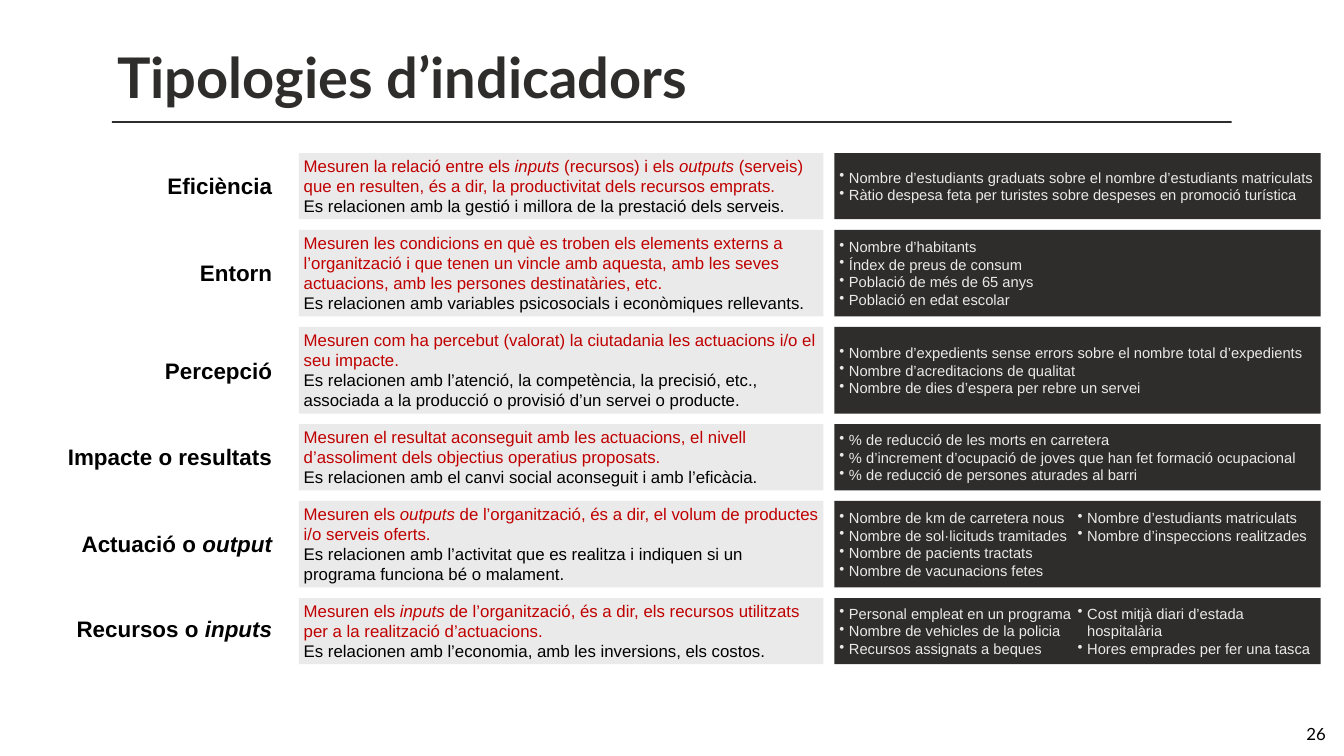
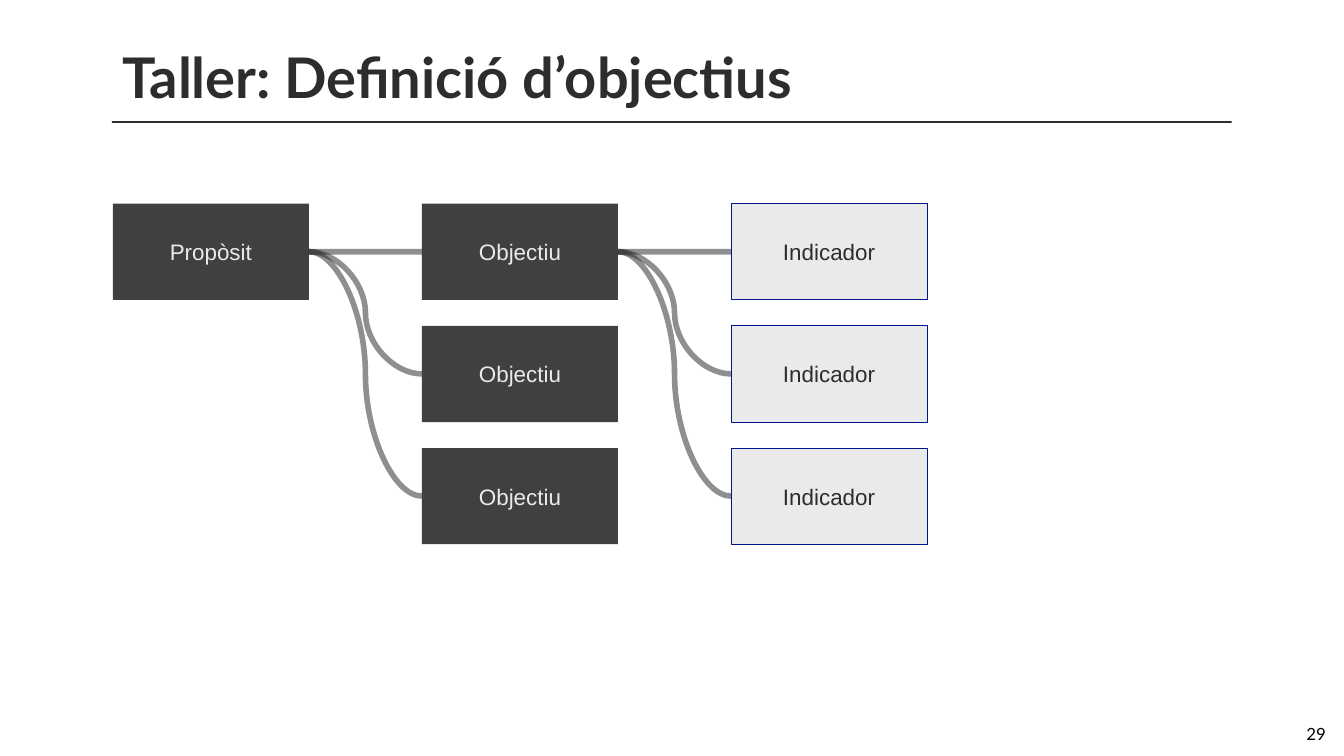
from lxml import etree
from pptx import Presentation
from pptx.dml import color
from pptx.enum import shapes, text
from pptx.oxml import ns
from pptx.util import Cm, Pt

INK, PALE, RED, BLACK = "2E2D2C", "EAEAEA", "C00000", "000000"
GREY, BLUE = "404040", "001689"
LEFT, MID, RIGHT = text.PP_ALIGN.LEFT, text.PP_ALIGN.CENTER, text.PP_ALIGN.RIGHT

# Label, what it measures, what it relates to, examples, columns of examples
TYPES = [
    ("Eficiència",
     "Mesuren la relació entre els *inputs* (recursos) i els *outputs* (serveis) "
     "que en resulten, és a dir, la productivitat dels recursos emprats.",
     "Es relacionen amb la gestió i millora de la prestació dels serveis.",
     ["Nombre d’estudiants graduats sobre el nombre d’estudiants matriculats",
      "Ràtio despesa feta per turistes sobre despeses en promoció turística"], 1),
    ("Entorn",
     "Mesuren les condicions en què es troben els elements externs a "
     "l’organització i que tenen un vincle amb aquesta, amb les seves "
     "actuacions, amb les persones destinatàries, etc.",
     "Es relacionen amb variables psicosocials i econòmiques rellevants.",
     ["Nombre d’habitants", "Índex de preus de consum",
      "Població de més de 65 anys", "Població en edat escolar"], 1),
    ("Percepció",
     "Mesuren com ha percebut (valorat) la ciutadania les actuacions i/o el "
     "seu impacte.",
     "Es relacionen amb l’atenció, la competència, la precisió, etc., "
     "associada a la producció o provisió d’un servei o producte.",
     ["Nombre d’expedients sense errors sobre el nombre total d’expedients",
      "Nombre d’acreditacions de qualitat",
      "Nombre de dies d’espera per rebre un servei"], 1),
    ("Impacte o resultats",
     "Mesuren el resultat aconseguit amb les actuacions, el nivell "
     "d’assoliment dels objectius operatius proposats.",
     "Es relacionen amb el canvi social aconseguit i amb l’eficàcia.",
     ["% de reducció de les morts en carretera",
      "% d’increment d’ocupació de joves que han fet formació ocupacional",
      "% de reducció de persones aturades al barri"], 1),
    ("Actuació o *output*",
     "Mesuren els *outputs* de l’organització, és a dir, el volum de productes "
     "i/o serveis oferts.",
     "Es relacionen amb l’activitat que es realitza i indiquen si un "
     "programa funciona bé o malament.",
     ["Nombre de km de carretera nous", "Nombre de sol·licituds tramitades",
      "Nombre de pacients tractats", "Nombre de vacunacions fetes",
      "Nombre d’estudiants matriculats", "Nombre d’inspeccions realitzades"], 2),
    ("Recursos o *inputs*",
     "Mesuren els *inputs* de l’organització, és a dir, els recursos utilitzats "
     "per a la realització d’actuacions.",
     "Es relacionen amb l’economia, amb les inversions, els costos.",
     ["Personal empleat en un programa", "Nombre de vehicles de la policia",
      "Recursos assignats a beques", "Cost mitjà diari d’estada hospitalària",
      "Hores emprades per fer una tasca"], 2),
]
LOW, HIGH, GAP = 3.33, 4.37, 0.53
HEIGHTS = [LOW, HIGH, HIGH, LOW, HIGH, LOW]


def rgb(code):
    return color.RGBColor.from_string(code)


def apply(item, values):
    for name, value in values.items():
        setattr(item, name, value)


def frame(shape, anchor="TOP", inset=None):
    """Make the text of a shape wrap, and place it."""
    body = shape.text_frame
    apply(body, {"word_wrap": True, "auto_size": text.MSO_AUTO_SIZE.NONE,
                 "vertical_anchor": getattr(text.MSO_ANCHOR, anchor)})
    if inset is not None:
        sides = ("left", "right", "top", "bottom")
        apply(body, {f"margin_{side}": Cm(inset) for side in sides})
    return body


def bullet(para):
    props = para._p.get_or_add_pPr()
    props.set("marL", str(Cm(0.48)))
    props.set("indent", str(Cm(-0.48)))
    etree.SubElement(props, ns.qn("a:buChar")).set("char", "•")


def write(body, lines, size, font="Arial", bold=False, align=LEFT, dots=False):
    """Write (words, colour) lines; words between asterisks are italic."""
    for i, (words, code) in enumerate(lines):
        para = body.add_paragraph() if i else body.paragraphs[0]
        para.alignment = align
        if dots:
            bullet(para)
        for j, part in enumerate(words.split("*")):
            if part:
                run = para.add_run()
                run.text = part
                apply(run.font, {"name": font, "size": Pt(size),
                                 "bold": bold, "italic": j % 2 == 1})
                run.font.color.rgb = rgb(code)


def label(slide, place):
    return slide.shapes.add_textbox(*map(Cm, place))


def block(slide, place, fill, edge=None):
    shape = slide.shapes.add_shape(shapes.MSO_SHAPE.RECTANGLE, *map(Cm, place))
    shape.shadow.inherit = False
    shape.fill.solid()
    shape.fill.fore_color.rgb = rgb(fill)
    if edge:
        shape.line.color.rgb = rgb(edge)
        shape.line.width = Pt(1)
    else:
        shape.line.fill.background()
    return shape


def curve(slide, start, end):
    """Link the left side of one box to the right side of another."""
    link = slide.shapes.add_connector(shapes.MSO_CONNECTOR.CURVE, 0, 0, 0, 0)
    link.begin_connect(start, 1)
    link.end_connect(end, 3)
    link.line.width = Pt(8)
    link.line.color.rgb = rgb(INK)
    tone = link.line._ln.find(".//" + ns.qn("a:srgbClr"))
    etree.SubElement(tone, ns.qn("a:alpha")).set("val", "52000")
    etree.SubElement(link._element.spPr, ns.qn("a:effectLst"))


def page(deck, title, number, inset):
    """Add a slide with its title, rule and page number."""
    slide = deck.slides.add_slide(deck.slide_layouts[6])
    block(slide, (5.64, 6.1, 56.44, 0.1), INK)
    head = frame(label(slide, (5.66, 1.85, 56.44, 3.99)), "MIDDLE", 0.25)
    head.margin_left = Cm(inset)
    write(head, [(title, INK)], 80, "Lato", bold=True)
    foot = frame(label(slide, (59.46, 36.45, 7.62, 1.02)), "MIDDLE", 0.25)
    write(foot, [(number, BLACK)], 24, "Lato", align=RIGHT)
    return slide


def types(deck):
    slide = page(deck, "Tipologies d’indicadors", "26", 0.25)
    top = 7.72
    for high, (name, aim, link, cases, cols) in zip(HEIGHTS, TYPES):
        tag = 1.9 if "inputs" in name else 1.63
        body = frame(label(slide, (2.46, top + (high - tag) / 2, 11.51, tag)))
        write(body, [(name, BLACK)], 32, bold=True, align=RIGHT)
        body = frame(block(slide, (15.06, top, 26.44, high), PALE))
        write(body, [(aim, RED), (link, BLACK)], 24)
        body = frame(block(slide, (42.06, top, 24.51, high), INK), "MIDDLE")
        body._txBody.bodyPr.set("numCol", str(cols))
        write(body, [(case, PALE) for case in cases], 21, dots=True)
        top += high + GAP


def node(slide, col, row, words, fill, ink, edge=None):
    place = (5.69 + 15.58 * col, 10.26 + 6.16 * row, 9.88, 4.85)
    shape = block(slide, place, fill, edge)
    write(frame(shape, "MIDDLE"), [(words, ink)], 32, align=MID)
    return shape


def tree(deck):
    slide = page(deck, "Taller: Definició d’objectius", "29", 0.5)
    root = node(slide, 0, 0, "Propòsit", GREY, PALE)
    goals = [node(slide, 1, row, "Objectiu", GREY, PALE) for row in range(3)]
    signs = [node(slide, 2, row, "Indicador", PALE, INK, BLUE)
             for row in range(3)]
    for source, group in ((root, goals), (goals[0], signs)):
        for target in group:
            curve(slide, target, source)


def main():
    deck = Presentation()
    apply(deck, {"slide_width": Cm(67.74), "slide_height": Cm(38.1)})
    types(deck)
    tree(deck)
    deck.save("out.pptx")


if __name__ == "__main__":
    main()
